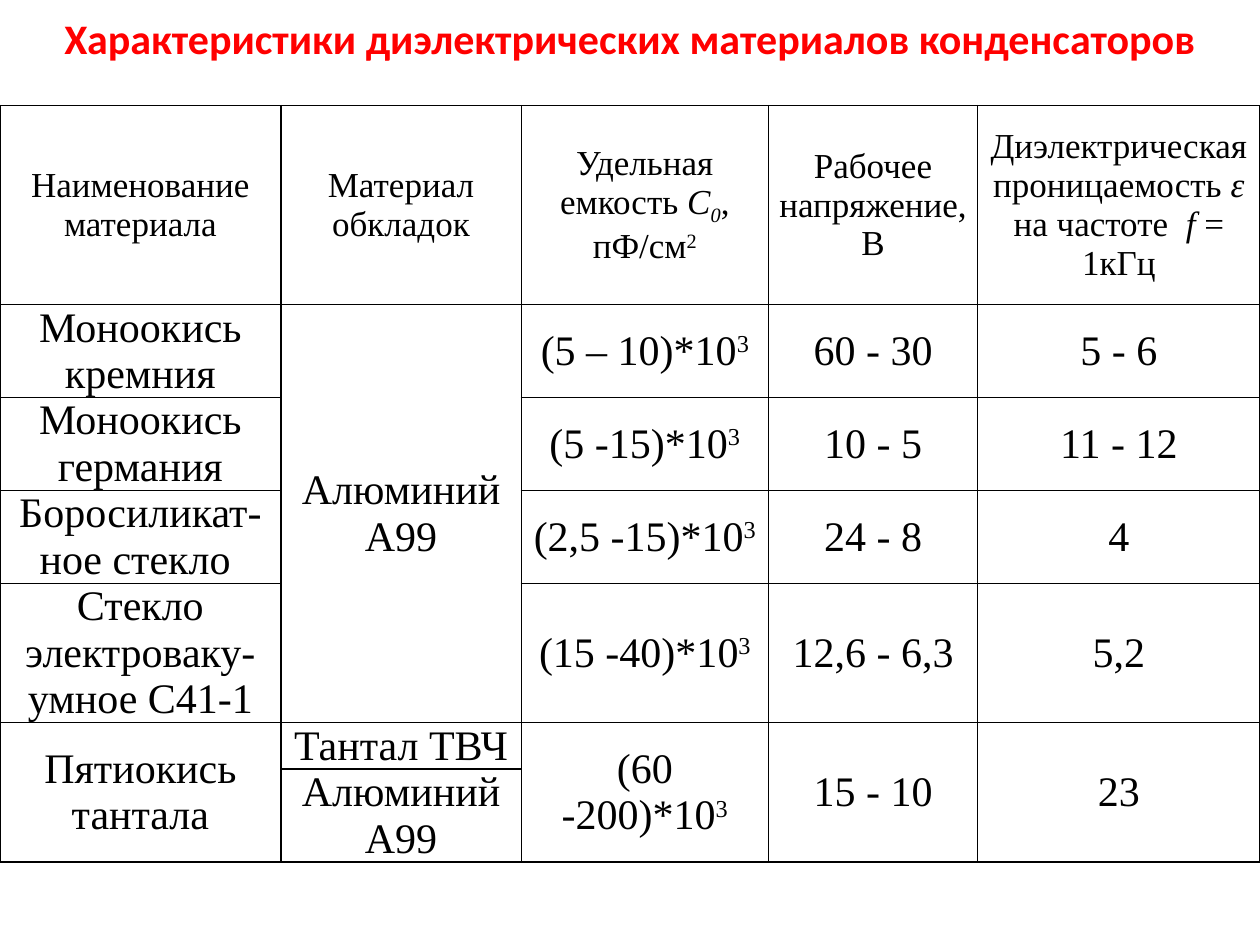
from lxml import etree
from pptx import Presentation
from pptx.dml import color
from pptx.enum import text
from pptx.oxml import ns
from pptx.util import Cm, Pt

SERIF = "Times New Roman"
COLS = [5.66, 4.85, 4.98, 4.22, 5.69]
ROWS = [4.01, 1.83, 1.83, 1.83, 2.74, 0.91, 1.83]
SPANS = [(1, 1, 4, 1), (5, 0, 6, 0), (5, 2, 6, 2), (5, 3, 6, 3), (5, 4, 6, 4)]
MARKS = {"/": (True, 0), "_": (True, -25000), "^": (False, 30000)}
CELLS = [
    ["Наименование материала", "Материал обкладок",
     "Удельная емкость |/С|_0|, пФ/см|^2", "Рабочее напряжение, В",
     "Диэлектрическая проницаемость |/ε |на частоте  |/f |= 1кГц"],
    ["Моноокись кремния", "Алюминий А99", "(5 – 10)*10|^3", "60 - 30", "5 - 6"],
    ["Моноокись германия", "", "(5 -15)*10|^3", "10 - 5", "11 - 12"],
    ["Боросиликат-ное стекло ", "", "(2,5 -15)*10|^3", "24 - 8", "4"],
    ["Стекло электроваку-умное С41-1", "", "(15 -40)*10|^3", "12,6 - 6,3", "5,2"],
    ["Пятиокись тантала", "Тантал ТВЧ", "(60 -200)*10|^3", "15 - 10", "23"],
    ["", "Алюминий А99", "", "", ""],
]


def paint(hue):
    """Turn a hex string into a colour."""
    return color.RGBColor.from_string(hue)


def style(para, size, face, hue, bold=False):
    """Centre a paragraph and set its font."""
    para.alignment = text.PP_ALIGN.CENTER
    font = para.font
    font.size, font.name, font.bold = Pt(size), face, bold
    font.color.rgb = paint(hue)


def write(para, words):
    """Add runs split at bars, each led by an optional style mark."""
    for part in words.split("|"):
        slant, shift = MARKS.get(part[:1], (False, 0))
        run = para.add_run()
        run.text = part[1:] if part[:1] in MARKS else part
        if slant:
            run.font.italic = True
        if shift:
            run.font._element.set("baseline", str(shift))


def edge(cell, hue, width):
    """Draw a line on all four sides of a cell."""
    props = cell._tc.get_or_add_tcPr()
    for spot, side in enumerate(("lnL", "lnR", "lnT", "lnB")):
        line = etree.Element(ns.qn("a:" + side), w=str(Pt(width)))
        fill = etree.SubElement(line, ns.qn("a:solidFill"))
        etree.SubElement(fill, ns.qn("a:srgbClr"), val=hue)
        props.insert(spot, line)


def title(slide, left, top, width, height):
    """Place the heading in its box."""
    frame = slide.shapes.add_textbox(Cm(left), Cm(top), Cm(width), Cm(height)).text_frame
    frame.word_wrap = True
    para = frame.paragraphs[0]
    para.text = "Характеристики диэлектрических материалов конденсаторов"
    style(para, 24, "Calibri", "FF0000", True)


def grid(slide, left, top):
    """Place the table of materials from its top left corner."""
    table = slide.shapes.add_table(len(ROWS), len(COLS), Cm(left), Cm(top),
                                   Cm(sum(COLS)), Cm(sum(ROWS))).table
    table.first_row = table.horz_banding = False
    for col, width in zip(table.columns, COLS):
        col.width = Cm(width)
    for row, height in zip(table.rows, ROWS):
        row.height = Cm(height)
    for r, line in enumerate(CELLS):
        for c, words in enumerate(line):
            cell = table.cell(r, c)
            cell.fill.background()
            edge(cell, "000000", 1)
            cell.vertical_anchor = text.MSO_ANCHOR.MIDDLE
            cell.margin_left = cell.margin_right = Cm(0.18)
            cell.margin_top = cell.margin_bottom = 0
            para = cell.text_frame.paragraphs[0]
            style(para, 24 if r else 20, SERIF, "000000")
            if words:
                write(para, words)
    for r, c, low, far in SPANS:
        table.cell(r, c).merge(table.cell(low, far))


def main():
    """Build and save the slide."""
    deck = Presentation()
    deck.slide_width, deck.slide_height = Cm(25.4), Cm(19.05)
    slide = deck.slides.add_slide(deck.slide_layouts[6])
    grid(slide, 0, 2.13)
    title(slide, 0, 0.13, 25.4, 1.27)
    deck.save("out.pptx")


if __name__ == "__main__":
    main()
